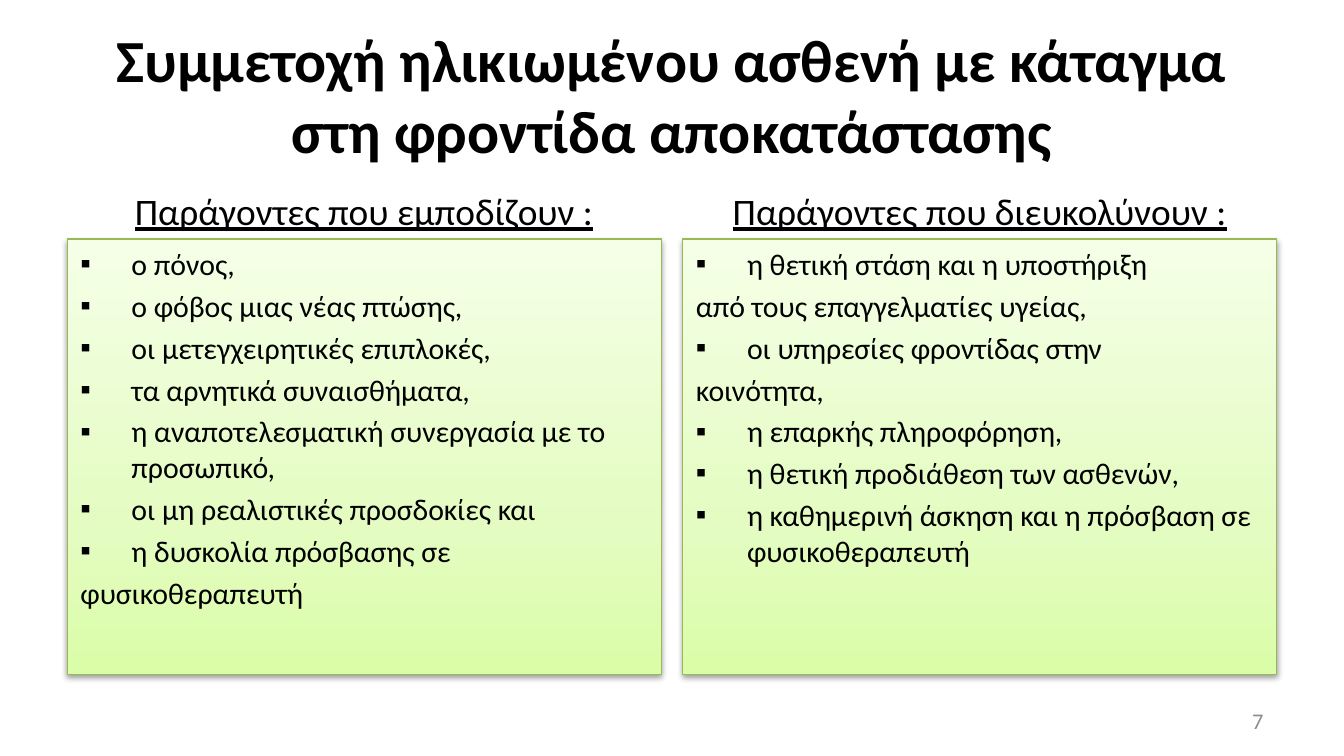
from pptx import Presentation
from pptx.dml.color import RGBColor
from pptx.enum.shapes import MSO_SHAPE as Preset
from pptx.enum.text import MSO_ANCHOR as Anchor, PP_ALIGN as Align
from pptx.oxml import parse_xml
from pptx.oxml.ns import nsdecls
from pptx.util import Inches, Pt

TITLE = "Συμμετοχή ηλικιωμένου ασθενή με κάταγμα στη φροντίδα αποκατάστασης"
PAGE_NUMBER = "7"
COLUMNS = [
    ("Παράγοντες που εμποδίζουν :", [
        ("▪", "o πόνος,"),
        ("▪", "ο φόβος μιας νέας πτώσης,"),
        ("▪", "οι μετεγχειρητικές επιπλοκές,"),
        ("▪", "τα αρνητικά συναισθήματα,"),
        ("▪", "η αναποτελεσματική συνεργασία με το προσωπικό,"),
        ("▪", "οι μη ρεαλιστικές προσδοκίες και"),
        ("▪", "η δυσκολία πρόσβασης σε"),
        ("", "φυσικοθεραπευτή"),
    ]),
    ("Παράγοντες που διευκολύνουν :", [
        ("▪", "η θετική στάση και η υποστήριξη"),
        ("", "από τους επαγγελματίες υγείας,"),
        ("▪", "οι υπηρεσίες φροντίδας στην"),
        ("", "κοινότητα,"),
        ("▪", "η επαρκής πληροφόρηση,"),
        ("▪", "η θετική προδιάθεση των ασθενών,"),
        ("▪", "η καθημερινή άσκηση και η πρόσβαση σε φυσικοθεραπευτή"),
    ]),
]
GRADIENT = [(0, "DAFDA7"), (35, "E4FCC2"), (100, "F5FFE7")]
BLACK, GREY, GREEN = "000000", "8C8C8C", "98B955"
SLIDE_WIDTH = Inches(10)
SLIDE_HEIGHT = SLIDE_WIDTH * 9 // 16
MARGIN, COLUMN_WIDTH, GAP = 0.5, 4.42, 0.16
HEADING_TOP, HEADING_HEIGHT, PANEL_HEIGHT = 1.26, 0.52, 3.24
INDENT = Inches(0.38)


def color(value):
    """Turn a hex string into a colour."""
    return RGBColor.from_string(value)


def style(paragraph, size, value=BLACK, bold=False, underline=False):
    """Set the font of a whole paragraph."""
    font = paragraph.font
    font.name, font.size, font.bold, font.underline = "Calibri", Pt(size), bold, underline
    font.color.rgb = color(value)


def add_text(slide, box, text, anchor, align, size, **font):
    """Add a one-paragraph text box."""
    frame = slide.shapes.add_textbox(*map(Inches, box)).text_frame
    frame.word_wrap, frame.vertical_anchor = True, anchor
    paragraph = frame.paragraphs[0]
    paragraph.text, paragraph.alignment = text, align
    style(paragraph, size, **font)


def add_panel(slide, box):
    """Add a green gradient panel with a soft shadow and return its text frame."""
    shape = slide.shapes.add_shape(Preset.RECTANGLE, *map(Inches, box))
    shape.line.color.rgb, shape.line.width = color(GREEN), Pt(0.75)
    shape.shadow.inherit = False
    stops = "".join(f'<a:gs pos="{position * 1000}"><a:srgbClr val="{value}"/></a:gs>'
                    for position, value in GRADIENT)
    properties = shape.element.spPr
    properties.find(".//{*}prstGeom").addnext(parse_xml(
        f'<a:gradFill {nsdecls("a")} rotWithShape="1"><a:gsLst>{stops}</a:gsLst>'
        '<a:lin ang="16200000" scaled="0"/></a:gradFill>'))
    properties.find("{*}effectLst").append(parse_xml(
        f'<a:outerShdw {nsdecls("a")} blurRad="{Pt(3.1)}" dist="{Pt(1.6)}" dir="5400000" '
        f'rotWithShape="0"><a:srgbClr val="{BLACK}"><a:alpha val="38000"/></a:srgbClr></a:outerShdw>'))
    frame = shape.text_frame
    frame.word_wrap, frame.vertical_anchor = True, Anchor.TOP
    return frame


def add_items(frame, items):
    """Fill a frame with hanging paragraphs, bulleted where a mark is given."""
    for index, (mark, text) in enumerate(items):
        paragraph = frame.add_paragraph() if index else frame.paragraphs[0]
        paragraph.text, paragraph.alignment = text, Align.LEFT
        paragraph.space_before = Pt(3.2 if index else 0)
        properties = paragraph._p.get_or_add_pPr()
        properties.set("marL", str(INDENT))
        properties.set("indent", str(-INDENT))
        if mark:
            properties.append(parse_xml(f'<a:buFont {nsdecls("a")} typeface="Arial"/>'))
            properties.append(parse_xml(f'<a:buChar {nsdecls("a")} char="{mark}"/>'))
        else:
            properties.append(parse_xml(f'<a:buNone {nsdecls("a")}/>'))
        style(paragraph, 16)


def main():
    """Build the slide and save it."""
    presentation = Presentation()
    presentation.slide_width, presentation.slide_height = SLIDE_WIDTH, SLIDE_HEIGHT
    slide = presentation.slides.add_slide(presentation.slide_layouts[6])
    add_text(slide, (MARGIN, 0.23, 9, 0.94), TITLE, Anchor.MIDDLE, Align.CENTER, 32, bold=True)
    for index, (heading, items) in enumerate(COLUMNS):
        left = MARGIN + index * (COLUMN_WIDTH + GAP)
        add_text(slide, (left, HEADING_TOP, COLUMN_WIDTH, HEADING_HEIGHT), heading,
                 Anchor.BOTTOM, Align.CENTER, 20, underline=True)
        panel = add_panel(slide, (left, HEADING_TOP + HEADING_HEIGHT, COLUMN_WIDTH, PANEL_HEIGHT))
        add_items(panel, items)
    add_text(slide, (7.17, 5.21, 2.33, 0.3), PAGE_NUMBER, Anchor.MIDDLE, Align.RIGHT, 12, value=GREY)
    presentation.save("out.pptx")


if __name__ == "__main__":
    main()
